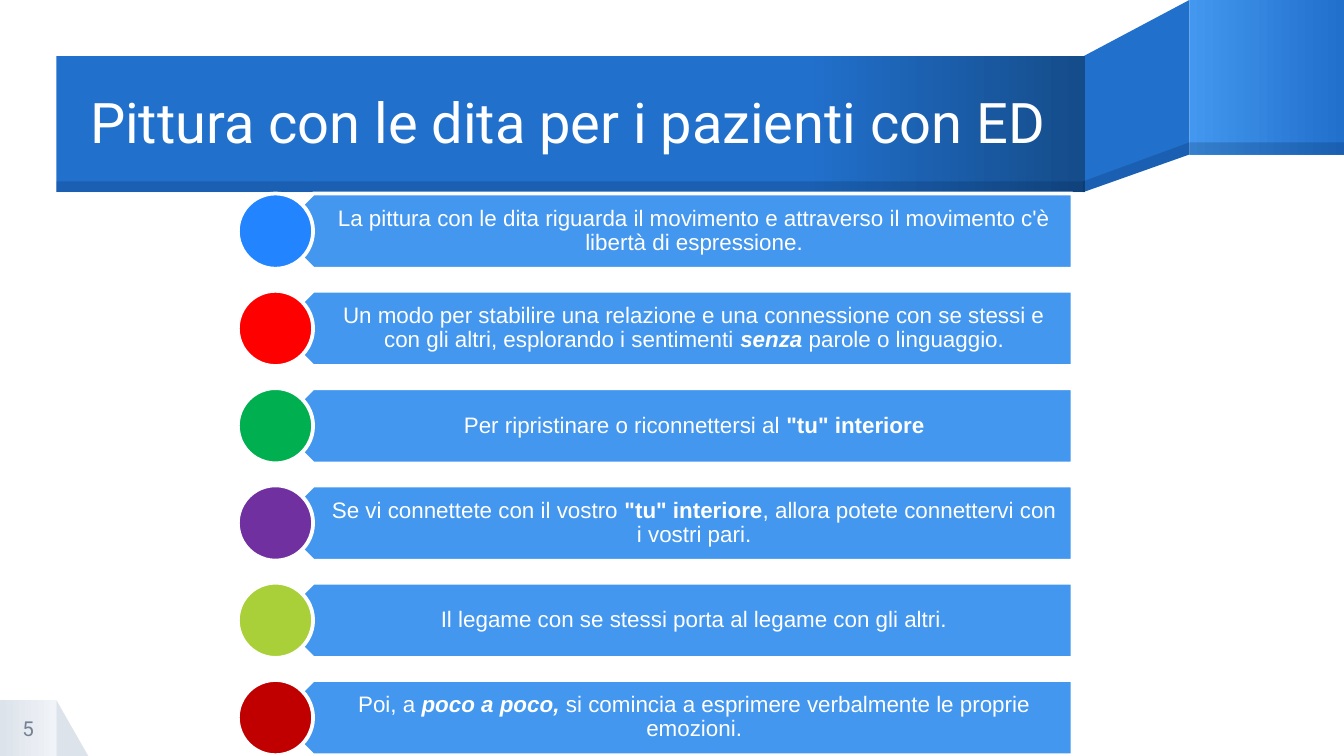
from lxml import etree
from pptx import Presentation
from pptx import util as u
from pptx.dml.color import RGBColor
from pptx.enum import shapes, text
from pptx.oxml import ns

WHITE = RGBColor(0xFF, 0xFF, 0xFF)
BLUE = RGBColor(0x21, 0x70, 0xCC)
LIGHT_BLUE = RGBColor(0x43, 0x97, 0xEE)
DARK_BLUE = RGBColor(0x15, 0x4C, 0x8A)
SHADE = RGBColor(0x00, 0x1F, 0x46)
GREY = RGBColor(0xDD, 0xE3, 0xEB)
PALE_GREY = RGBColor(0xF0, 0xF3, 0xF7)
NUMBER_GREY = RGBColor(0x74, 0x83, 0x94)

SHAPE = shapes.MSO_SHAPE
PLAIN, BOLD, BOLD_ITALIC = (False, False), (True, False), (True, True)

# Circle colour and styled pieces of text for each row
ROWS = [
    (RGBColor(0x23, 0x84, 0xFF),
     [("La pittura con le dita riguarda il movimento e attraverso il movimento c'è "
       "libertà di espressione.", PLAIN)]),
    (RGBColor(0xFF, 0x00, 0x00),
     [("Un modo per stabilire una relazione e una connessione con se stessi e con gli "
       "altri, esplorando i sentimenti ", PLAIN),
      ("senza ", BOLD_ITALIC), ("parole o linguaggio.", PLAIN)]),
    (RGBColor(0x00, 0xB0, 0x50),
     [("Per ripristinare o riconnettersi al ", PLAIN), ('"tu" interiore', BOLD)]),
    (RGBColor(0x70, 0x30, 0xA0),
     [("Se vi connettete con il vostro ", PLAIN), ('"tu" interiore', BOLD),
      (", allora potete connettervi con i vostri pari.", PLAIN)]),
    (RGBColor(0xA9, 0xD0, 0x39),
     [("Il legame con se stessi porta al legame con gli altri.", PLAIN)]),
    (RGBColor(0xC0, 0x00, 0x00),
     [("Poi, a ", PLAIN), ("poco a poco, ", BOLD_ITALIC),
      ("si comincia a esprimere verbalmente le proprie emozioni.", PLAIN)]),
]


class SlideBuilder:
    heading_font = "Roboto"
    body_font = "Arial"
    outline_width = u.Pt(2)

    def __init__(self, slide):
        self.slide = slide

    def paint(self, shape, color, opacity=None, outline=None):
        shape.shadow.inherit = False
        shape.fill.solid()
        shape.fill.fore_color.rgb = color
        if opacity is not None:
            color_element = shape._element.spPr.find(".//" + ns.qn("a:srgbClr"))
            alpha = etree.SubElement(color_element, ns.qn("a:alpha"))
            alpha.set("val", str(opacity * 1000))
        if outline is None:
            shape.line.fill.background()
        else:
            shape.line.color.rgb = outline
            shape.line.width = self.outline_width

    def preset(self, kind, box, color, **style):
        shape = self.slide.shapes.add_shape(kind, *map(u.Inches, box))
        self.paint(shape, color, **style)
        return shape

    def gradient(self, box, first, last, start=0):
        shape = self.preset(SHAPE.RECTANGLE, box, first)
        shape.fill.gradient()
        shape.fill.gradient_angle = 0
        stops = shape.fill.gradient_stops
        for stop, color, position in zip(stops, (first, last), (start, 1)):
            stop.color.rgb = color
            stop.position = position

    def polygon(self, points, color, **style):
        corners = [(u.Inches(x), u.Inches(y)) for x, y in points]
        builder = self.slide.shapes.build_freeform(*corners[0])
        builder.add_line_segments(corners[1:], close=True)
        self.paint(builder.convert_to_shape(), color, **style)

    def text(self, box, pieces, size, font, color, centered=True, spacing=None,
             insets=(0, 0, 0, 0)):
        frame = self.slide.shapes.add_textbox(*map(u.Inches, box)).text_frame
        frame.word_wrap = True
        frame.vertical_anchor = text.MSO_ANCHOR.MIDDLE
        (frame.margin_left, frame.margin_top,
         frame.margin_right, frame.margin_bottom) = map(u.Inches, insets)
        paragraph = frame.paragraphs[0]
        paragraph.alignment = text.PP_ALIGN.CENTER if centered else text.PP_ALIGN.LEFT
        paragraph.line_spacing = spacing
        for content, (bold, italic) in pieces:
            run = paragraph.add_run()
            run.text = content
            run.font.name = font
            run.font.size = u.Pt(size)
            run.font.color.rgb = color
            run.font.bold = bold
            run.font.italic = italic

    def row(self, top, color, pieces):
        height = 0.56
        banner = self.preset(SHAPE.PENTAGON, (2.05, top, 5.93, height), LIGHT_BLUE,
                             outline=WHITE)
        banner.rotation = 180
        self.text((2.19, top, 5.79, height), pieces, 12, self.body_font, WHITE,
                  spacing=0.9, insets=(0.25, 0.05, 0.09, 0.05))
        self.preset(SHAPE.OVAL, (1.77, top, height, height), color, outline=WHITE)


def main():
    presentation = Presentation()
    presentation.slide_width = u.Inches(10)
    presentation.slide_height = presentation.slide_width * 9 // 16
    builder = SlideBuilder(presentation.slides.add_slide(presentation.slide_layouts[6]))

    # Page number corner
    corner = (0, 5.21, 0.42, 0.42)
    builder.preset(SHAPE.RIGHT_TRIANGLE, (0.42, 5.21, 0.24, 0.42), GREY)
    builder.gradient(corner, GREY, PALE_GREY)

    # Folded ribbon
    builder.polygon([(8.85, 0), (8.06, 0.42), (8.06, 1.43), (8.85, 1.15)], BLUE)
    builder.gradient((8.85, 0, 1.15, 1.15), LIGHT_BLUE, BLUE)
    builder.gradient((0.42, 0.42, 7.65, 1.01), BLUE, DARK_BLUE, start=0.73)

    # Shaded lower edge of the ribbon
    builder.polygon([(8.85, 1.06), (8.06, 1.35), (8.06, 1.43), (8.85, 1.15)], SHADE,
                    opacity=20)
    for box in ((8.85, 1.06, 1.15, 0.09), (0.42, 1.35, 7.65, 0.08)):
        builder.preset(SHAPE.RECTANGLE, box, SHADE, opacity=20)

    # Title
    builder.text((0.67, 0.43, 7.39, 1.01),
                 [("Pittura con le dita per i pazienti con ED", PLAIN)],
                 30, builder.heading_font, WHITE, centered=False, spacing=0.9)

    # Rows, evenly spaced between the first and last tops
    first_top, last_top = 1.44, 5.06
    pitch = (last_top - first_top) / (len(ROWS) - 1)
    for index, (color, pieces) in enumerate(ROWS):
        builder.row(first_top + index * pitch, color, pieces)

    # Page number
    builder.text(corner, [("5", PLAIN)], 11, builder.heading_font, NUMBER_GREY)

    presentation.save("out.pptx")


if __name__ == "__main__":
    main()
